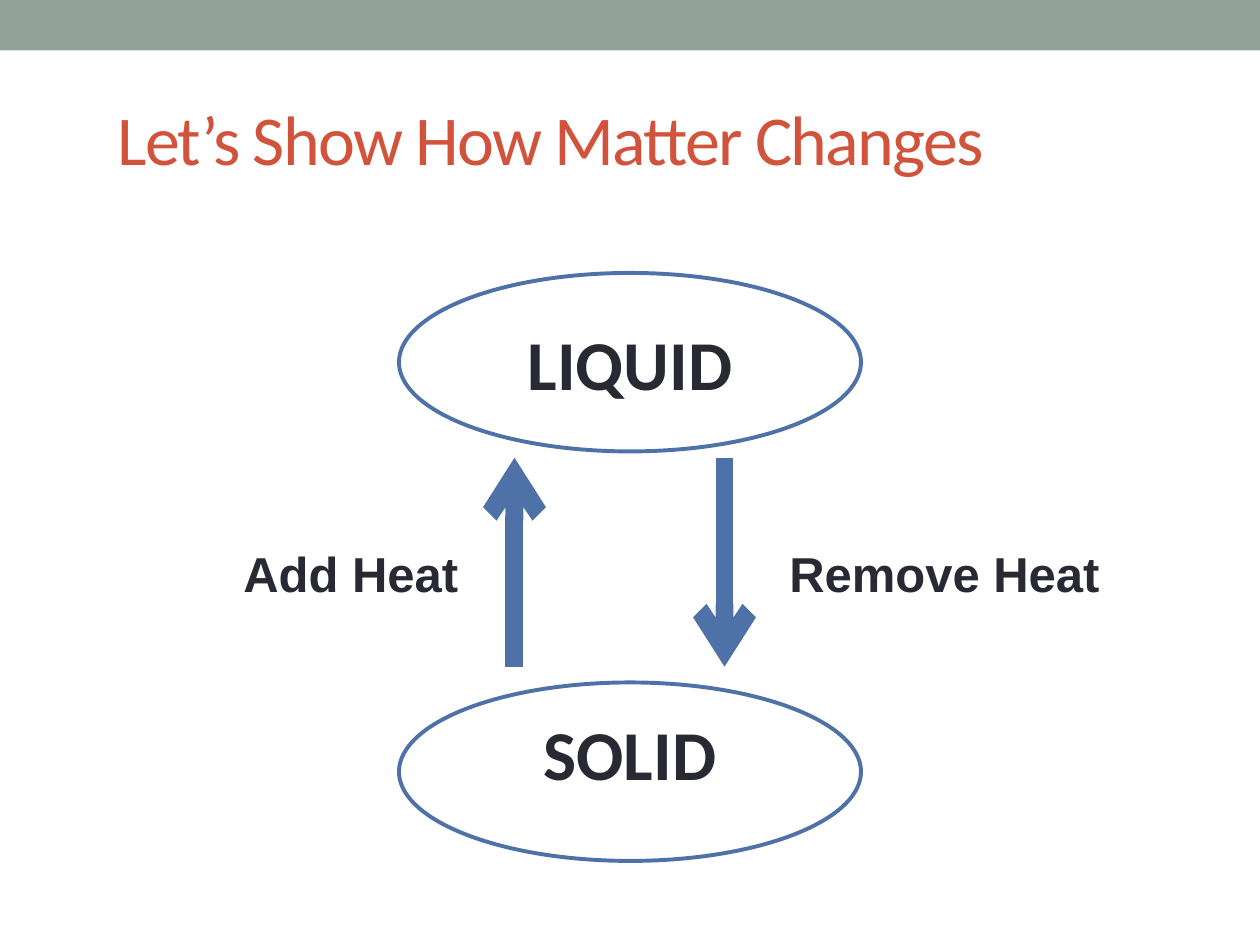
from lxml.etree import SubElement
from pptx import Presentation
from pptx.dml.color import RGBColor
from pptx.enum.shapes import MSO_CONNECTOR, MSO_SHAPE
from pptx.enum.text import MSO_ANCHOR, PP_ALIGN
from pptx.oxml.ns import qn
from pptx.util import Inches, Pt

COLS, ROWS = 120, 90
CELL = Inches(10) / COLS
BLUE, INK = "4E72A8", "292934"


def color(code):
    """Turn a hex string into a colour."""
    return RGBColor.from_string(code)


def grid(*cells):
    """Turn grid cells into lengths."""
    return [round(cell * CELL) for cell in cells]


def write(frame, text, font, size, code, bold=False):
    """Put one styled, vertically centred line in a text frame."""
    frame.text = text
    frame.word_wrap = True
    frame.vertical_anchor = MSO_ANCHOR.MIDDLE
    run = frame.paragraphs[0].runs[0]
    run.font.name, run.font.size, run.font.bold = font, Pt(size), bold
    run.font.color.rgb = color(code)
    return run


def band(slide, box):
    """Draw the plain band across the top."""
    shape = slide.shapes.add_shape(MSO_SHAPE.RECTANGLE, *grid(*box))
    shape.shadow.inherit = False
    shape.fill.solid()
    shape.fill.fore_color.rgb = color("93A299")
    shape.line.fill.background()


def title(slide, box, text):
    """Write the tightly spaced slide title."""
    frame = slide.shapes.add_textbox(*grid(*box)).text_frame
    run = write(frame, text, "Calibri", 40, "D2533C")
    run.font._element.set("spc", "-100")


def state(slide, box, text, lift=0):
    """Draw a state of matter as an outlined oval with its name."""
    shape = slide.shapes.add_shape(MSO_SHAPE.OVAL, *grid(*box))
    shape.shadow.inherit = False
    shape.fill.background()
    shape.line.color.rgb = color(BLUE)
    shape.line.width = Pt(2.25)
    frame = shape.text_frame
    frame.margin_top = 0
    frame.margin_bottom = grid(2 * lift)[0]
    write(frame, text, "Calibri", 40, INK, True)
    frame.paragraphs[0].alignment = PP_ALIGN.CENTER


def arrow(slide, col, start, end):
    """Draw a thick upright arrow from one row to another."""
    line = slide.shapes.add_connector(
        MSO_CONNECTOR.STRAIGHT, *grid(col, start, col, end))
    line.line.color.rgb = color(BLUE)
    line.line.width = Pt(10.25)
    SubElement(line.line._get_or_add_ln(), qn("a:tailEnd"), type="arrow")
    SubElement(line._element.spPr, qn("a:effectLst"))


def label(slide, box, text):
    """Name the change beside an arrow."""
    frame = slide.shapes.add_textbox(*grid(*box)).text_frame
    write(frame, text, "Arial", 28, INK, True)


def cycle(slide, box):
    """Place two states, with the changes between them, in a box."""
    left, top, width, height = box
    oval_w, oval_h = 44, 17
    mid = left + (width - oval_w) / 2
    low = top + height - oval_h
    state(slide, (mid, top, oval_w, oval_h), "LIQUID")
    state(slide, (mid, low, oval_w, oval_h), "SOLID", 1.8)
    high, deep = top + oval_h + 0.6, low - 1.5
    arrow(slide, mid + 11, deep, high)
    arrow(slide, mid + 31, high, deep)
    row = (high + deep) / 2 - 2.4
    label(slide, (left, row, 30, 6.8), "Add Heat")
    label(slide, (left + 52, row, 35, 6.8), "Remove Heat")


def main():
    """Build and save the slide."""
    deck = Presentation()
    deck.slide_width, deck.slide_height = grid(COLS, ROWS)
    slide = deck.slides.add_slide(deck.slide_layouts[6])
    band(slide, (0, 0, COLS, 4.8))
    title(slide, (10, 6.6, 104, 13), "Let’s Show How Matter Changes")
    cycle(slide, (22, 26, 76, 56))
    deck.save("out.pptx")


if __name__ == "__main__":
    main()
